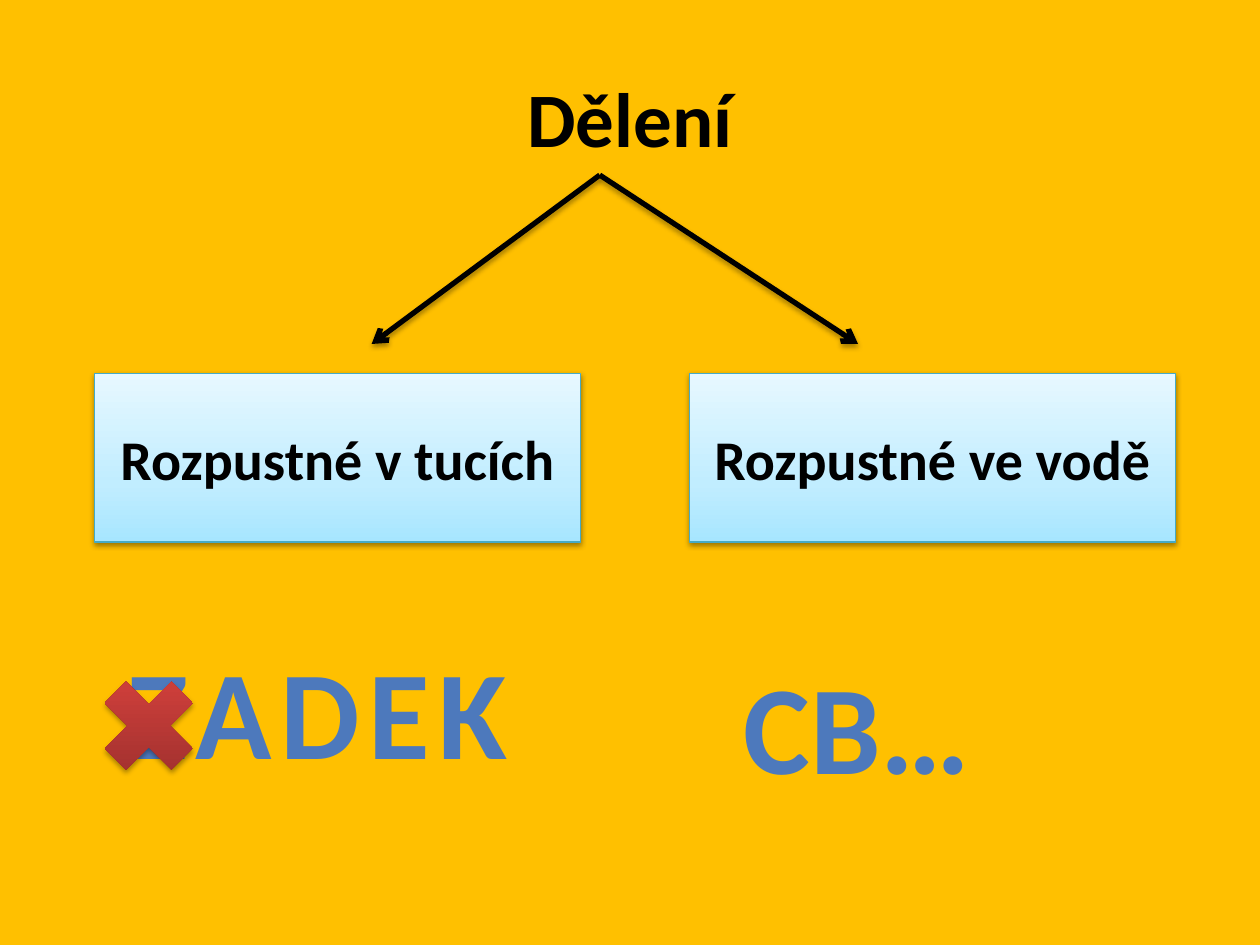
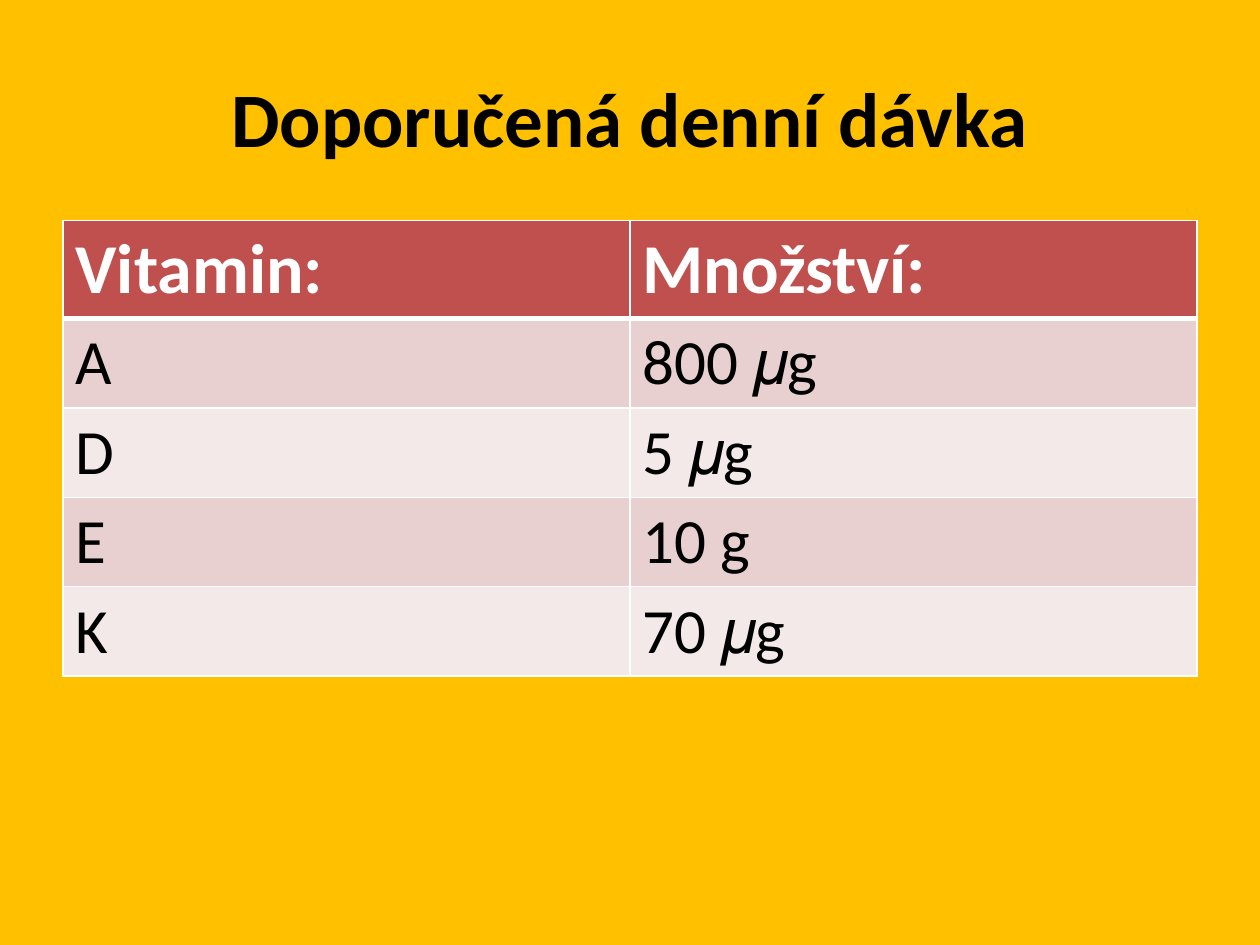
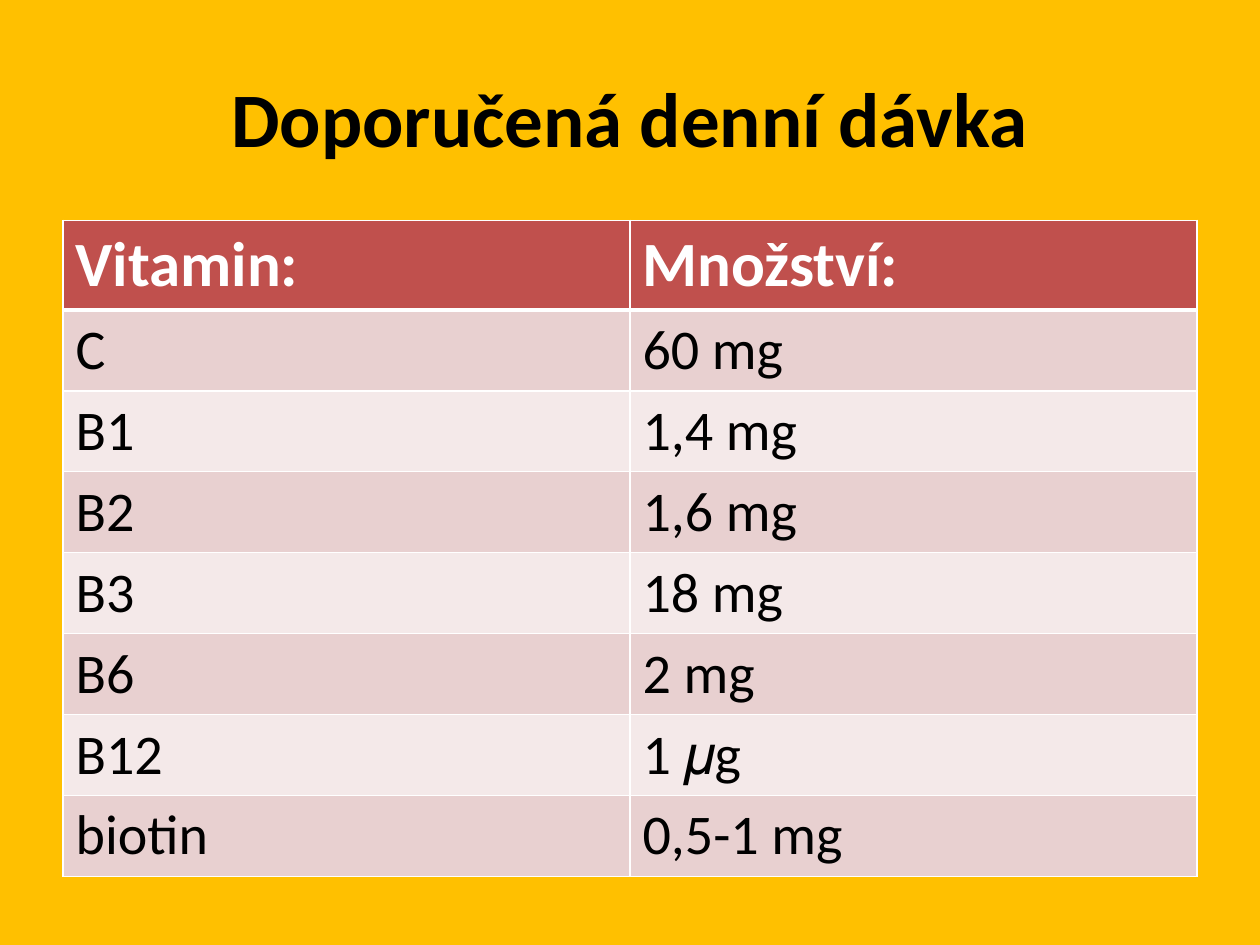
from dataclasses import dataclass

from lxml import etree
from pptx import Presentation, util as u
from pptx.dml.color import RGBColor
from pptx.enum import shapes, text
from pptx.oxml import ns

WIDTH, HEIGHT = u.Inches(10), u.Inches(7.5)
LINE_SPACING = 1.22
CELL_PADDING = u.Inches(0.1)


@dataclass(frozen=True)
class Theme:
    font: str = "Calibri"
    background: str = "FFC000"
    ink: str = "000000"
    white: str = "FFFFFF"
    mnemonic: str = "4D79BC"
    header: str = "C0504D"
    bands: tuple = ("E8D0D0", "F4E9E9")
    box_line: str = "46AAC5"
    box_stops: tuple = ((0, "A7E6FF"), (35, "C1EDFF"), (100, "E7F8FF"))
    cross_stops: tuple = ((0, "9C2F2D"), (80, "CB3E3A"), (100, "CE3B37"))
    title_size: int = 44
    box_size: int = 32
    mnemonic_size: int = 72


THEME = Theme()
TITLE_AREA = (5, 4, 90, 16.67)
TABLE_LEFT, TABLE_TOP, TABLE_WIDTH = 5, 23.33, 90


def across(percent):
    return round(WIDTH * percent / 100)


def down(percent):
    return round(HEIGHT * percent / 100)


def place(left, top, width, height):
    """Turn percentages of the slide into a position and a size."""
    return across(left), down(top), across(width), down(height)


def add_xml(parent, tag, **attributes):
    values = {name: str(value) for name, value in attributes.items()}
    return etree.SubElement(parent, ns.qn(tag), values)


def add_colour(parent, colour):
    return add_xml(parent, "a:srgbClr", val=colour)


def write(paragraph, words, size, colour=THEME.ink, bold=True,
          align=text.PP_ALIGN.CENTER):
    paragraph.alignment = align
    run = paragraph.add_run()
    run.text = words
    formats = {"name": THEME.font, "size": u.Pt(size), "bold": bold}
    for name, value in formats.items():
        setattr(run.font, name, value)
    run.font.color.rgb = RGBColor.from_string(colour)
    return run


def add_text(slide, area, words, size, colour=THEME.ink, wrap=True, spacing=0):
    frame = slide.shapes.add_textbox(*place(*area)).text_frame
    frame.word_wrap = wrap
    frame.vertical_anchor = text.MSO_ANCHOR.MIDDLE
    run = write(frame.paragraphs[0], words, size, colour)
    if spacing:
        run.font._element.set("spc", str(spacing * 100))


def add_shadow(shape, opacity, distance):
    """Put a soft shadow below a shape or connector whose line is already set."""
    properties = shape._element.spPr
    effects = add_xml(properties, "a:effectLst")
    shadow = add_xml(effects, "a:outerShdw", blurRad=u.Pt(3.1), dist=u.Pt(distance),
                     dir=90 * 60000, rotWithShape=0)
    add_xml(add_colour(shadow, THEME.ink), "a:alpha", val=opacity * 1000)


def fill_upwards(shape, stops):
    """Fill with a gradient that runs from bottom to top."""
    shape.fill.gradient()
    shape.fill.gradient_angle = 90
    stop_list = shape._element.spPr.find(".//" + ns.qn("a:gsLst"))
    for stop in list(stop_list):
        stop_list.remove(stop)
    for position, colour in stops:
        add_colour(add_xml(stop_list, "a:gs", pos=position * 1000), colour)


def add_box(slide, area, words):
    box = slide.shapes.add_shape(shapes.MSO_SHAPE.RECTANGLE, *place(*area))
    fill_upwards(box, THEME.box_stops)
    box.line.color.rgb = RGBColor.from_string(THEME.box_line)
    box.line.width = u.Pt(0.75)
    add_shadow(box, 38, 1.6)
    box.text_frame.vertical_anchor = text.MSO_ANCHOR.MIDDLE
    write(box.text_frame.paragraphs[0], words, THEME.box_size)


def add_cross(slide, area):
    cross = slide.shapes.add_shape(shapes.MSO_SHAPE.MATH_MULTIPLY, *place(*area))
    fill_upwards(cross, THEME.cross_stops)
    cross.line.fill.background()
    add_shadow(cross, 35, 1.8)


def add_arrow(slide, start, end):
    arrow = slide.shapes.add_connector(
        shapes.MSO_CONNECTOR.STRAIGHT,
        across(start[0]), down(start[1]), across(end[0]), down(end[1]))
    arrow.line.color.rgb = RGBColor.from_string(THEME.ink)
    arrow.line.width = u.Pt(3)
    add_xml(arrow.line._get_or_add_ln(), "a:tailEnd", type="arrow")
    add_shadow(arrow, 35, 1.8)


def style_cell(cell, row):
    """Draw white borders, thick below the header, and the fill of the row."""
    widths = {"a:lnL": 1, "a:lnR": 1, "a:lnT": 3 if row == 1 else 1,
              "a:lnB": 3 if row == 0 else 1}
    properties = cell._tc.get_or_add_tcPr()
    for side, width in widths.items():
        border = add_xml(properties, side, w=u.Pt(width))
        add_colour(add_xml(border, "a:solidFill"), THEME.white)
    cell.fill.solid()
    colour = THEME.bands[(row - 1) % 2] if row else THEME.header
    cell.fill.fore_color.rgb = RGBColor.from_string(colour)


def add_dose_table(slide, doses, header_size, body_size):
    rows = [("Vitamin:", "Množství:"), *doses]
    sizes = [header_size] + [body_size] * len(doses)
    heights = [u.Pt(size * LINE_SPACING) + CELL_PADDING for size in sizes]
    table = slide.shapes.add_table(
        len(rows), 2, across(TABLE_LEFT), down(TABLE_TOP),
        across(TABLE_WIDTH), sum(heights)).table
    for row, values in enumerate(rows):
        table.rows[row].height = heights[row]
        for column, words in enumerate(values):
            cell = table.cell(row, column)
            style_cell(cell, row)
            is_amount = row > 0 and column == 1
            write(cell.text_frame.paragraphs[0], words, sizes[row],
                  colour=THEME.ink if row else THEME.white, bold=row == 0,
                  align=text.PP_ALIGN.JUSTIFY if is_amount else text.PP_ALIGN.LEFT)


def add_slide(presentation, title):
    slide = presentation.slides.add_slide(presentation.slide_layouts[6])
    slide.background.fill.solid()
    slide.background.fill.fore_color.rgb = RGBColor.from_string(THEME.background)
    add_text(slide, TITLE_AREA, title, THEME.title_size)
    return slide


def add_division_slide(presentation):
    slide = add_slide(presentation, "Dělení")
    add_text(slide, (5.2, 66.27, 40, 17.47), "ZADEK", THEME.mnemonic_size,
             THEME.mnemonic, wrap=False, spacing=5)
    for end in (68.1, 29.5):
        add_arrow(slide, (47.6, 18.53), (end, 36.4))
    for left, words in ((54.7, "Rozpustné ve vodě"), (7.5, "Rozpustné v tucích")):
        add_box(slide, (left, 39.5, 38.6, 17.87), words)
    add_cross(slide, (6.7, 70, 10.2, 13.6))
    add_text(slide, (57.9, 67.87, 20.2, 17.47), "CB…", THEME.mnemonic_size,
             THEME.mnemonic, wrap=False)


def main():
    presentation = Presentation()
    presentation.slide_width, presentation.slide_height = WIDTH, HEIGHT
    add_division_slide(presentation)

    fat_soluble = [("A", "800 𝜇g"), ("D", "5 𝜇g"), ("E", "10 g"), ("K", "70 𝜇g")]
    water_soluble = [("C", "60 mg"), ("B1", "1,4 mg"), ("B2", "1,6 mg"),
                     ("B3", "18 mg"), ("B6", "2 mg"), ("B12", "1 𝜇g"),
                     ("biotin", "0,5-1 mg")]
    for doses, header_size, body_size in ((fat_soluble, 40, 36),
                                          (water_soluble, 36, 32)):
        slide = add_slide(presentation, "Doporučená denní dávka")
        add_dose_table(slide, doses, header_size, body_size)
    presentation.save("out.pptx")


if __name__ == "__main__":
    main()
